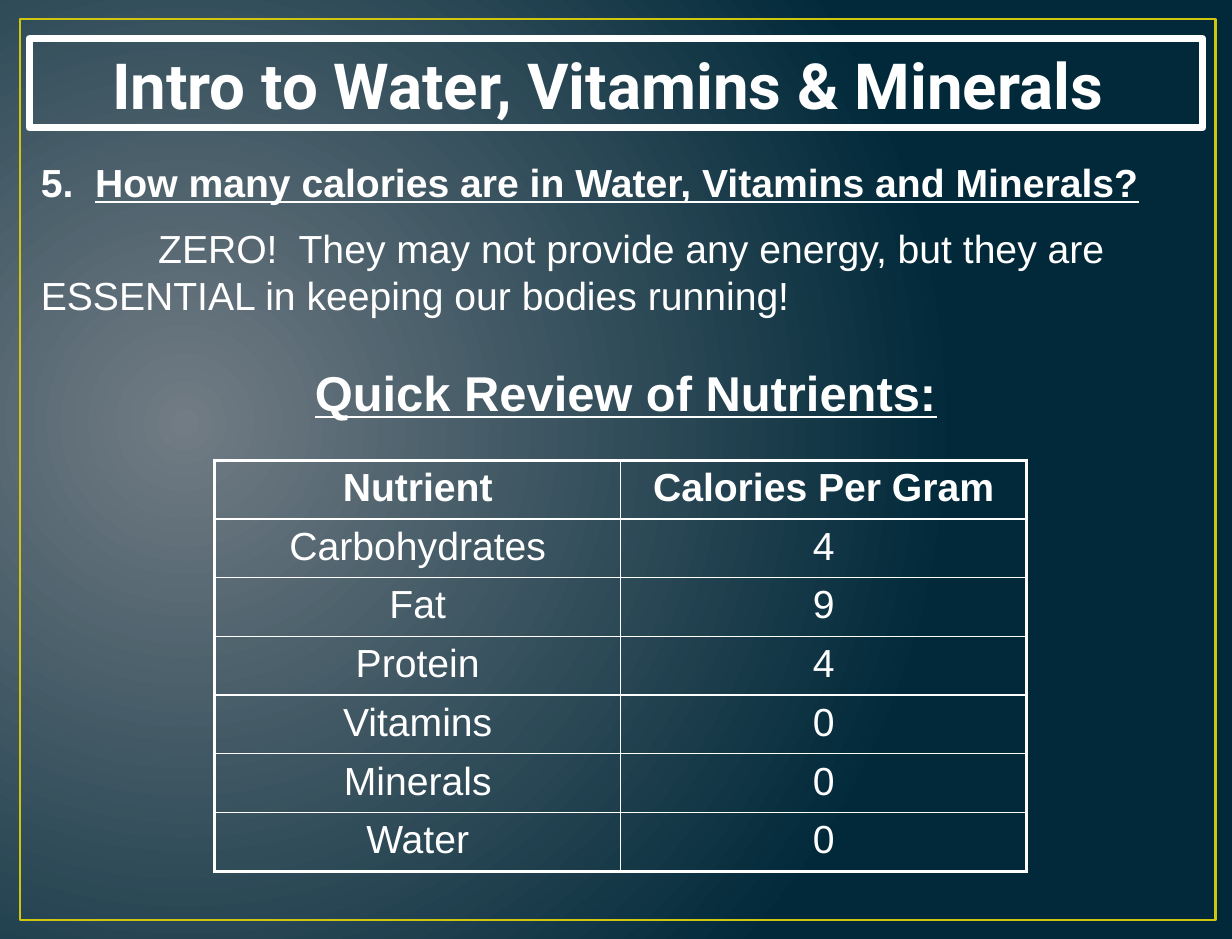
from dataclasses import dataclass

from lxml.etree import SubElement
from pptx import Presentation
from pptx.dml.color import RGBColor
from pptx.enum.shapes import MSO_SHAPE
from pptx.enum.text import MSO_ANCHOR, PP_ALIGN
from pptx.oxml import parse_xml
from pptx.oxml.ns import nsdecls, qn
from pptx.util import Inches, Pt


@dataclass(frozen=True)
class Theme:
    glow: str = "717C84"
    navy: str = "01293A"
    gold: str = "CFC60D"
    white: str = "FFFFFF"
    title_font: str = "Roboto"
    body_font: str = "Arial"
    title_size: float = 39
    heading_size: float = 30
    body_size: float = 24
    thin: float = 1
    thick: float = 2.25


class SlideBuilder:
    def __init__(self, s, theme):
        self.s, self.theme = s, theme

    def background(self):
        fill = self.s.background.fill
        fill.gradient()
        for stop, color, pos in zip(fill.gradient_stops, (self.theme.glow, self.theme.navy), (0, 1)):
            stop.color.rgb = RGBColor.from_string(color)
            stop.position = pos
        grad = next(self.s.element.iter(qn("a:gradFill")))
        grad.remove(grad.find(qn("a:lin")))
        circle = SubElement(grad, qn("a:path"), path="circle")
        SubElement(circle, qn("a:fillToRect"), l="15000", t="50000", r="85000", b="60000")

    def frame(self, x, y, w, h, color, width):
        sp = self.s.shapes.add_shape(MSO_SHAPE.RECTANGLE, Inches(x), Inches(y), Inches(w), Inches(h))
        sp.shadow.inherit = False
        sp.fill.background()
        sp.line.color.rgb = RGBColor.from_string(color)
        sp.line.width = Pt(width)
        return sp

    def style(self, r, size, font=None, bold=False, underline=False):
        r.font.name = font or self.theme.body_font
        r.font.size = Pt(size)
        r.font.bold = bold
        r.font.underline = underline
        r.font.color.rgb = RGBColor.from_string(self.theme.white)

    def title(self, text, x, y, w, h):
        sp = self.frame(x, y, w, h, self.theme.white, 4.5)
        tf = sp.text_frame
        tf.text = text
        tf.word_wrap = True
        tf.vertical_anchor = MSO_ANCHOR.BOTTOM
        p = tf.paragraphs[0]
        p.alignment = PP_ALIGN.CENTER
        self.style(p.runs[0], self.theme.title_size, self.theme.title_font, bold=True)

    def body(self, number, question, answer, heading, x, y, w, h):
        tf = self.s.shapes.add_textbox(Inches(x), Inches(y), Inches(w), Inches(h)).text_frame
        tf.word_wrap = True
        p = tf.paragraphs[0]
        p.text = number
        p.add_run().text = question
        for r, underline in zip(p.runs, (False, True)):
            self.style(r, self.theme.body_size, bold=True, underline=underline)

        p = tf.add_paragraph()
        p.text = answer
        p.space_before = Pt(11.5)
        p._p.get_or_add_pPr().set("indent", str(Inches(1)))
        self.style(p.runs[0], self.theme.body_size)

        p = tf.add_paragraph()
        p.text = heading
        p.space_before = Pt(27.5)
        p.alignment = PP_ALIGN.CENTER
        self.style(p.runs[0], self.theme.heading_size, bold=True, underline=True)

    def cell_borders(self, cell, **widths):
        """Set border widths in points by side: L, R, T and B."""
        tc_pr = cell._tc.get_or_add_tcPr()
        for i, side in enumerate("LRTB"):
            tc_pr.insert(i, parse_xml(
                f'<a:ln{side} {nsdecls("a")} w="{Pt(widths[side])}"><a:solidFill>'
                f'<a:srgbClr val="{self.theme.white}"/></a:solidFill></a:ln{side}>'))

    def table(self, rows, x, y, w, row_h):
        n, m = len(rows), len(rows[0])
        tbl = self.s.shapes.add_table(
            n, m, Inches(x), Inches(y), Inches(w), Inches(row_h * n)).table
        tbl.first_row = tbl.horz_banding = False
        thin, thick = self.theme.thin, self.theme.thick
        for i, row in enumerate(rows):
            for j, value in enumerate(row):
                cell = tbl.cell(i, j)
                cell.fill.background()
                cell.text = value
                p = cell.text_frame.paragraphs[0]
                p.alignment = PP_ALIGN.CENTER
                self.style(p.runs[0], self.theme.body_size, bold=i == 0)
                self.cell_borders(
                    cell,
                    L=thick if j == 0 else thin, R=thick if j == m - 1 else thin,
                    T=thick if i == 0 else thin, B=thick if i == n - 1 else thin)


NUTRIENTS = [
    ("Nutrient", "Calories Per Gram"),
    ("Carbohydrates", "4"),
    ("Fat", "9"),
    ("Protein", "4"),
    ("Vitamins", "0"),
    ("Minerals", "0"),
    ("Water", "0"),
]


def main():
    prs = Presentation()
    prs.slide_width, prs.slide_height = Inches(10.5), Inches(8)
    theme = Theme()
    slide = SlideBuilder(prs.slides.add_slide(prs.slide_layouts[6]), theme)
    slide.background()
    slide.frame(0.17, 0.16, 10.19, 7.68, theme.gold, 1.5)
    slide.body(
        "5.  ", "How many calories are in Water, Vitamins and Minerals?",
        "ZERO!  They may not provide any energy, but they are "
        "ESSENTIAL in keeping our bodies running!",
        "Quick Review of Nutrients:", 0.25, 1.3, 10.17, 2.39)
    slide.table(NUTRIENTS, 1.83, 3.92, 6.92, 0.5)
    slide.title("Intro to Water, Vitamins & Minerals ", 0.25, 0.33, 10, 0.76)
    prs.save("out.pptx")


if __name__ == "__main__":
    main()
